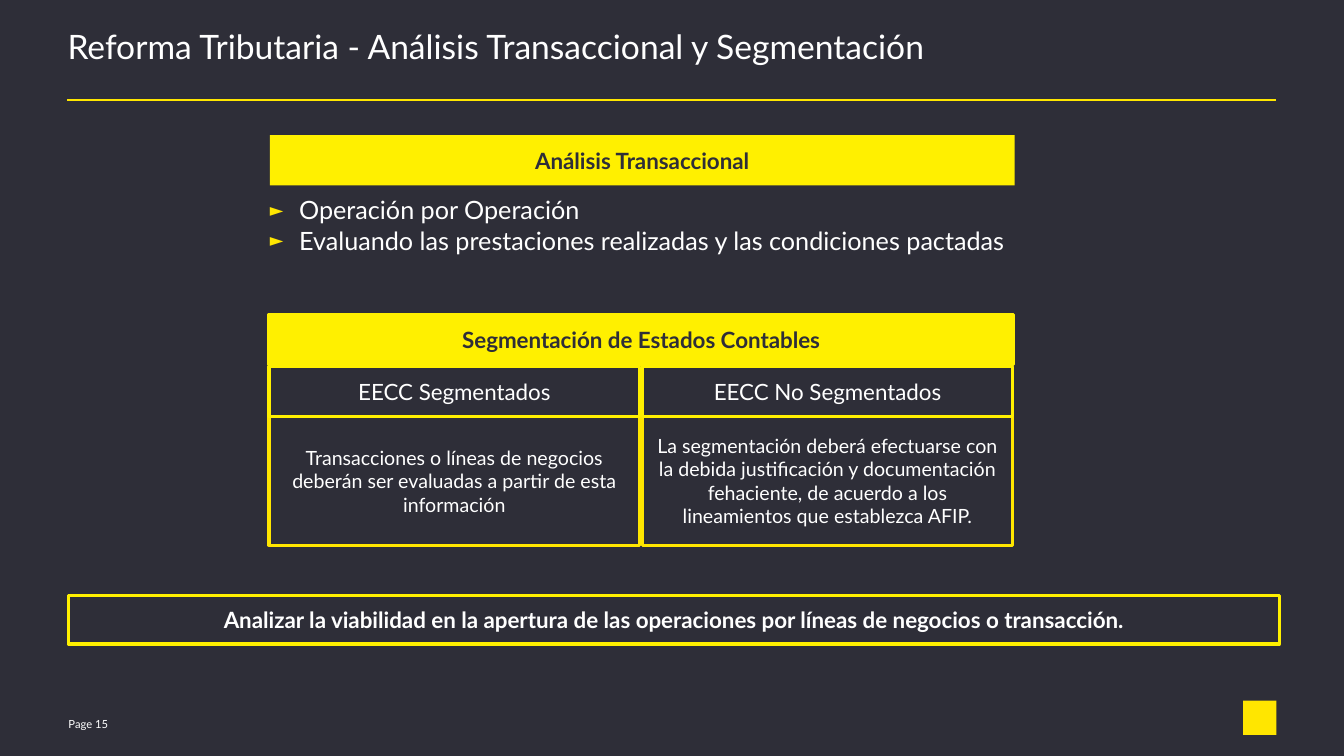
from dataclasses import dataclass

from lxml.etree import SubElement
from pptx import Presentation
from pptx.dml.color import RGBColor
from pptx.enum.shapes import MSO_CONNECTOR, MSO_SHAPE
from pptx.enum.text import MSO_ANCHOR, PP_ALIGN
from pptx.oxml.ns import qn
from pptx.util import Inches, Pt


@dataclass(frozen=True)
class Theme:
    font: str = "Lato"
    dark: str = "2E2E38"
    white: str = "FFFFFF"
    accent: str = "FFE600"
    bright: str = "FFF000"
    title: int = 24
    bullet: int = 18
    heading: int = 16
    body: int = 14
    footer: int = 8
    rule: float = 1.5
    border: float = 2.25


THEME = Theme()


def rgb(color):
    return RGBColor.from_string(color)


def write(frame, *paragraphs, size, color=THEME.white, bold=False,
          align=PP_ALIGN.LEFT, anchor=MSO_ANCHOR.TOP, spacing=None):
    frame.word_wrap = True
    frame.vertical_anchor = anchor
    for index, words in enumerate(paragraphs):
        paragraph = frame.add_paragraph() if index else frame.paragraphs[0]
        paragraph.alignment = align
        paragraph.line_spacing = spacing
        run = paragraph.add_run()
        run.text = words
        run.font.name = THEME.font
        run.font.size = Pt(size)
        run.font.bold = bold
        run.font.color.rgb = rgb(color)


def add_label(slide, box, *paragraphs, top_inset=0, **style):
    """Add unframed text without side margins and return its text frame."""
    frame = slide.shapes.add_textbox(*map(Inches, box)).text_frame
    frame.margin_left = frame.margin_right = frame.margin_bottom = 0
    frame.margin_top = Inches(top_inset)
    write(frame, *paragraphs, **style)
    return frame


def add_box(slide, box, words="", fill=None, border=None, **style):
    """Add a rectangle with optional fill, border and centred text."""
    rectangle = slide.shapes.add_shape(MSO_SHAPE.RECTANGLE, *map(Inches, box))
    rectangle.shadow.inherit = False
    if fill:
        rectangle.fill.solid()
        rectangle.fill.fore_color.rgb = rgb(fill)
    else:
        rectangle.fill.background()
    if border:
        rectangle.line.color.rgb = rgb(border)
        rectangle.line.width = Pt(THEME.border)
    else:
        rectangle.line.fill.background()
    if words:
        write(rectangle.text_frame, words, align=PP_ALIGN.CENTER,
              anchor=MSO_ANCHOR.MIDDLE, **style)


def add_rule(slide, left, right, y):
    rule = slide.shapes.add_connector(
        MSO_CONNECTOR.STRAIGHT, *map(Inches, (left, y, right, y)))
    rule.line.color.rgb = rgb(THEME.accent)
    rule.line.width = Pt(THEME.rule)
    SubElement(rule._element.spPr, qn("a:effectLst"))


def add_bullets(frame, indent=0.29):
    for paragraph in frame.paragraphs:
        properties = paragraph._p.get_or_add_pPr()
        properties.set("marL", str(Inches(indent)))
        properties.set("indent", str(-Inches(indent)))
        color = SubElement(properties, qn("a:buClr"))
        SubElement(color, qn("a:srgbClr"), val=THEME.accent)
        SubElement(properties, qn("a:buSzPct"), val="70000")
        SubElement(properties, qn("a:buFont"), typeface=THEME.font)
        SubElement(properties, qn("a:buChar"), char="►")


def add_segment(slide, left, width, heading, explanation):
    """Add one column of the segmentation block."""
    add_box(slide, (left, 4.13, width, 1.28), explanation,
            border=THEME.accent, size=THEME.body)
    add_box(slide, (left, 3.64, width, 0.49), heading,
            border=THEME.bright, size=THEME.heading)


def main():
    deck = Presentation()
    deck.slide_width, deck.slide_height = Inches(13.34), Inches(7.5)
    slide = deck.slides.add_slide(deck.slide_layouts[6])
    slide.background.fill.solid()
    slide.background.fill.fore_color.rgb = rgb(THEME.dark)

    add_label(slide, (0.67, 0.32, 12.01, 0.65),
              "Reforma Tributaria - Análisis Transaccional y Segmentación",
              size=THEME.title, spacing=0.85)
    add_rule(slide, 0.67, 12.67, 0.99)

    banner = dict(fill=THEME.bright, color=THEME.dark, size=THEME.heading, bold=True)
    add_box(slide, (2.68, 1.34, 7.39, 0.5), "Análisis Transaccional", **banner)
    criteria = add_label(
        slide, (2.68, 1.89, 8.6, 0.65),
        "Operación por Operación",
        "Evaluando las prestaciones realizadas y las condiciones pactadas",
        top_inset=0.04, size=THEME.bullet)
    add_bullets(criteria)

    add_segment(slide, 2.67, 3.68, "EECC Segmentados",
                "Transacciones o líneas de negocios deberán ser evaluadas "
                "a partir de esta información")
    add_segment(slide, 6.38, 3.67, "EECC No Segmentados",
                "La segmentación deberá efectuarse con la debida justificación y "
                "documentación fehaciente, de acuerdo a los lineamientos que "
                "establezca AFIP.")
    add_box(slide, (2.67, 3.12, 7.39, 0.5), "Segmentación de Estados Contables",
            border=THEME.bright, **banner)

    add_box(slide, (0.68, 5.91, 12.02, 0.48),
            "Analizar la viabilidad en la apertura de las operaciones "
            "por líneas de negocios o transacción.",
            border=THEME.bright, size=THEME.heading, bold=True)

    add_label(slide, (0.68, 7.08, 0.73, 0.2), "Page 15",
              size=THEME.footer, anchor=MSO_ANCHOR.MIDDLE)
    add_box(slide, (12.34, 6.95, 0.33, 0.34), fill=THEME.accent)

    deck.save("out.pptx")


if __name__ == "__main__":
    main()
